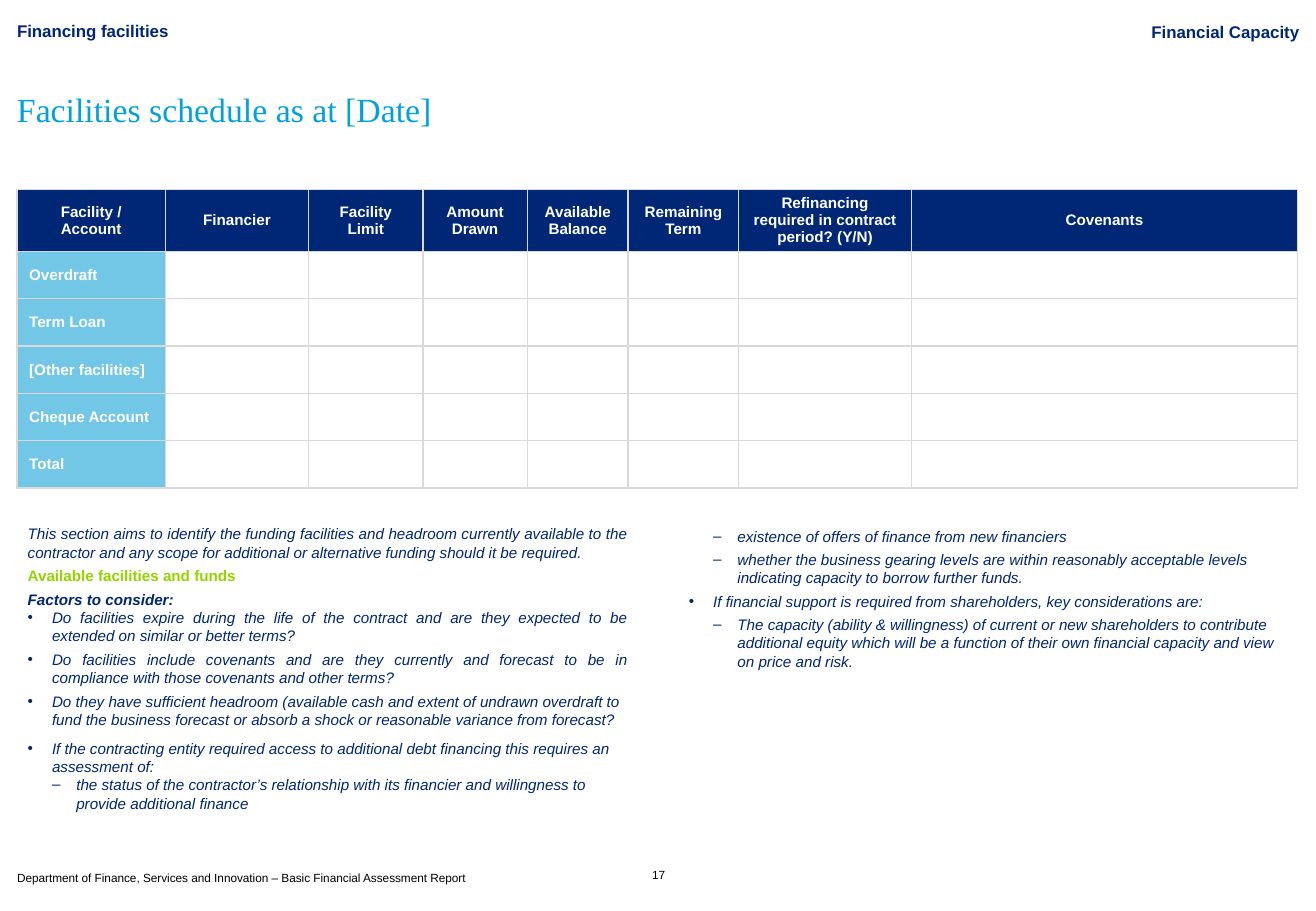
from dataclasses import dataclass

from lxml.etree import SubElement
from pptx import Presentation
from pptx.dml.color import RGBColor
from pptx.enum.text import MSO_ANCHOR as Anchor, MSO_AUTO_SIZE as AutoSize, PP_ALIGN as Align
from pptx.oxml.ns import qn
from pptx.util import Inches, Pt


@dataclass(frozen=True)
class Theme:
    navy: str = "002776"
    cyan: str = "00A1DE"
    sky: str = "72C7E7"
    green: str = "92D400"
    grey: str = "D9D9D9"
    white: str = "FFFFFF"
    black: str = "000000"
    sans: str = "Arial"
    serif: str = "Times New Roman"
    heading: int = 20
    label: int = 10
    body: int = 9
    small: int = 7
    border: int = 1


T = Theme()
TITLE = "Financial Capacity"
SECTION = "Financing facilities"
HEADING = "Facilities schedule as at [Date]"
FOOTER = "Department of Finance, Services and Innovation – Basic Financial Assessment Report"
PAGE = "17"

COLUMNS = [
    ("Facility / Account", 1.22), ("Financier", 1.18), ("Facility Limit", 0.94),
    ("Amount Drawn", 0.86), ("Available Balance", 0.83), ("Remaining Term", 0.91),
    ("Refinancing required in contract period? (Y/N)", 1.42), ("Covenants", 3.18),
]
FACILITIES = ["Overdraft", "Term Loan", "[Other facilities]", "Cheque Account", "Total"]
HEADER_HEIGHT, ROW_HEIGHT = 0.51, 0.39

STYLES = {
    "text": dict(color=T.navy, italic=True),
    "topic": dict(color=T.green, bold=True),
    "lead": dict(color=T.navy, bold=True, italic=True),
}
BULLETS = {1: "•", 2: "–"}
STEP = 0.2

# style, level, alignment, space after, text
LEFT_NOTES = [
    ("text", 0, Align.JUSTIFY, 3.2, "This section aims to identify the funding facilities and headroom currently "
     "available to the contractor and any scope for additional or alternative funding should it be required."),
    ("topic", 0, Align.JUSTIFY, 3.2, "Available facilities and funds"),
    ("lead", 0, Align.JUSTIFY, 0, "Factors to consider:"),
    ("text", 1, Align.JUSTIFY, 3.2, "Do facilities expire during the life of the contract and are they expected "
     "to be extended on similar or better terms?"),
    ("text", 1, Align.JUSTIFY, 3.2, "Do facilities include covenants and are they currently and forecast to be in "
     "compliance with those covenants and other terms?"),
    ("text", 1, Align.LEFT, 6, "Do they have sufficient headroom (available cash and extent of undrawn overdraft "
     "to fund the business forecast or absorb a shock or reasonable variance from forecast?"),
    ("text", 1, Align.LEFT, 0, "If the contracting entity required access to additional debt financing this "
     "requires an assessment of:"),
    ("text", 2, Align.LEFT, 0, "the status of the contractor’s relationship with its financier and willingness "
     "to provide additional finance"),
]
RIGHT_NOTES = [
    ("text", 2, Align.LEFT, 3, "existence of offers of finance from new financiers"),
    ("text", 2, Align.LEFT, 3, "whether the business gearing levels are within reasonably acceptable levels "
     "indicating capacity to borrow further funds."),
    ("text", 1, Align.LEFT, 3, "If financial support is required from shareholders, key considerations are:"),
    ("text", 2, Align.LEFT, 0, "The capacity (ability & willingness) of current or new shareholders to contribute "
     "additional equity which will be a function of their own financial capacity and view on price and risk."),
]


def write(p, text, size, color, font=T.sans, bold=False, italic=False, align=Align.LEFT):
    r = p.add_run()
    r.text = text
    r.font.name, r.font.size = font, Pt(size)
    r.font.bold, r.font.italic = bold, italic
    r.font.color.rgb = RGBColor.from_string(color)
    p.alignment = align


def frame(sp, box, anchor=Anchor.TOP, inset=(0, 0), wrap=True):
    sp.left, sp.top, sp.width, sp.height = (Inches(v) for v in box)
    tf = sp.text_frame
    tf.word_wrap, tf.auto_size, tf.vertical_anchor = wrap, AutoSize.NONE, anchor
    tf.margin_left = tf.margin_right = Inches(inset[0])
    tf.margin_top = tf.margin_bottom = Inches(inset[1])
    return tf


def text_box(s, box, **options):
    return frame(s.shapes.add_textbox(0, 0, 0, 0), box, **options)


def add_notes(s, box, notes):
    tf = text_box(s, box, inset=(0.1, 0.05))
    for i, (style, level, align, after, text) in enumerate(notes):
        p = tf.paragraphs[0] if i == 0 else tf.add_paragraph()
        write(p, text, T.body, align=align, **STYLES[style])
        p.space_after = Pt(after)
        if level:
            pPr = p._p.get_or_add_pPr()
            pPr.set("marL", str(Inches(STEP * level)))
            pPr.set("indent", str(-Inches(STEP)))
            SubElement(pPr, qn("a:buFont")).set("typeface", T.sans)
            SubElement(pPr, qn("a:buChar")).set("char", BULLETS[level])


def add_borders(cell):
    tcPr = cell._tc.get_or_add_tcPr()
    for i, side in enumerate(("lnL", "lnR", "lnT", "lnB")):
        ln = tcPr.makeelement(qn("a:" + side), {"w": str(Pt(T.border))})
        SubElement(SubElement(ln, qn("a:solidFill")), qn("a:srgbClr")).set("val", T.grey)
        tcPr.insert(i, ln)


def add_schedule(s, left, top):
    heights = [HEADER_HEIGHT] + [ROW_HEIGHT] * len(FACILITIES)
    widths = [width for _, width in COLUMNS]
    table = s.shapes.add_table(len(heights), len(widths), Inches(left), Inches(top),
                               Inches(sum(widths)), Inches(sum(heights))).table
    table.first_row = table.horz_banding = False
    for column, width in zip(table.columns, widths):
        column.width = Inches(width)
    for row, height in zip(table.rows, heights):
        row.height = Inches(height)
    blanks = [""] * (len(COLUMNS) - 1)
    grid = [[name for name, _ in COLUMNS]] + [[name] + blanks for name in FACILITIES]
    for i, texts in enumerate(grid):
        for j, text in enumerate(texts):
            cell = table.cell(i, j)
            cell.vertical_anchor = Anchor.MIDDLE
            cell.margin_top = cell.margin_bottom = Inches(0.04)
            if text:
                cell.fill.solid()
                cell.fill.fore_color.rgb = RGBColor.from_string(T.sky if i else T.navy)
                write(cell.text_frame.paragraphs[0], text, T.body, T.white, bold=True,
                      align=Align.JUSTIFY if i else Align.CENTER)
            else:
                cell.fill.background()
            add_borders(cell)


def main():
    """Build the facilities schedule slide."""
    prs = Presentation()
    prs.slide_width, prs.slide_height = Inches(10.83), Inches(7.5)
    s = prs.slides.add_slide(prs.slide_layouts[5])

    tf = frame(s.shapes.title, (6.62, 0.18, 4.07, 0.17))
    write(tf.paragraphs[0], TITLE, T.label, T.navy, bold=True, align=Align.RIGHT)
    tf = text_box(s, (0.14, 0.17, 3.75, 0.17))
    write(tf.paragraphs[0], SECTION, T.label, T.navy, bold=True)
    tf = text_box(s, (0.14, 0.34, 10.56, 1.12), anchor=Anchor.MIDDLE)
    write(tf.paragraphs[0], HEADING, T.heading, T.cyan, font=T.serif)

    add_schedule(s, 0.14, 1.56)
    add_notes(s, (0.13, 4.27, 5.13, 2.57), LEFT_NOTES)
    add_notes(s, (5.57, 4.29, 5.12, 2.85), RIGHT_NOTES)

    tf = text_box(s, (0.14, 7.13, 10.55, 0.2), inset=(0, 0.04), wrap=False)
    write(tf.paragraphs[0], FOOTER, T.small, T.black)
    tf = text_box(s, (5.27, 7.14, 0.3, 0.12), anchor=Anchor.BOTTOM)
    write(tf.paragraphs[0], PAGE, T.small, T.black, align=Align.CENTER)
    prs.save("out.pptx")


if __name__ == "__main__":
    main()
